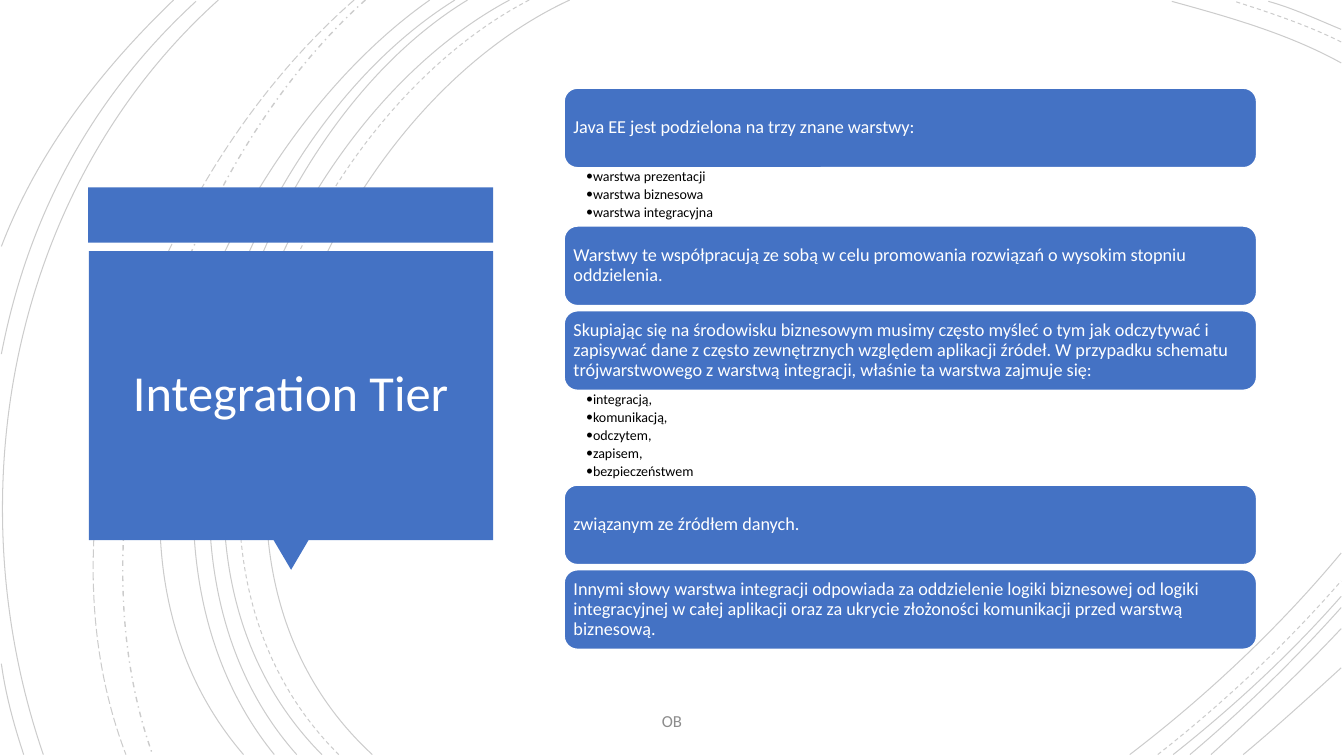
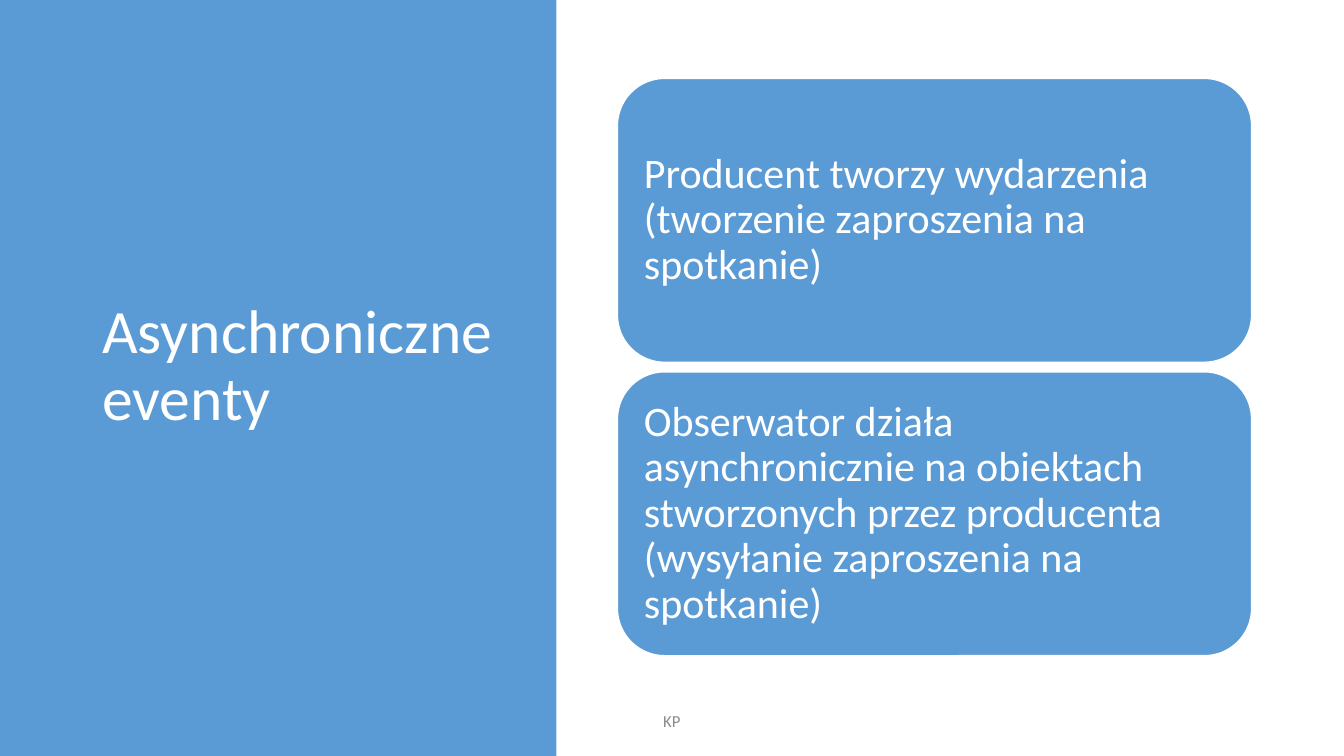
from lxml.etree import SubElement
from pptx import Presentation
from pptx.dml.color import RGBColor
from pptx.enum.dml import MSO_LINE_DASH_STYLE as Dash
from pptx.enum.shapes import MSO_SHAPE as Shape
from pptx.enum.text import MSO_ANCHOR as Anchor, PP_ALIGN as Align
from pptx.oxml.ns import qn
from pptx.util import Pt

FONT = "Calibri"
WHITE = RGBColor(0xFF, 0xFF, 0xFF)
BLACK = RGBColor(0x00, 0x00, 0x00)
GREY = RGBColor(0x8C, 0x8C, 0x8C)
BLUE = RGBColor(0x44, 0x72, 0xC4)
SKY = RGBColor(0x5B, 0x9B, 0xD5)

# Cubic curves (start, two controls, end) grouped by dash style and line width
ARCS = {
    (Dash.SOLID, 0.75): [
        ((407, 0), (227, 83), (103, 389), (266, 539)),
        ((364, 0), (194, 91), (79, 387), (230, 539)),
        ((334, 0), (176, 96), (79, 390), (212, 539)),
        ((325, 0), (166, 99), (70, 384), (196, 539)),
        ((307, 0), (156, 106), (38, 381), (174, 539)),
        ((156, 0), (8, 133), (-33, 353), (31, 539)),
        ((140, 1), (66, 69), (20, 154), (1, 253)),
        ((124, 0), (72, 50), (27, 108), (1, 176)),
        ((1, 474), (4, 496), (10, 518), (17, 539)),
        ((958, 45), (920, 24), (877, 12), (837, 1)),
        ((958, 21), (941, 14), (924, 6), (906, 1)),
        ((807, 539), (862, 497), (914, 448), (958, 395)),
        ((838, 539), (881, 505), (922, 467), (958, 426)),
        ((850, 539), (888, 507), (924, 472), (958, 434)),
        ((865, 539), (897, 510), (929, 480), (958, 449)),
        ((888, 539), (912, 519), (935, 498), (958, 477)),
    ],
    (Dash.DASH, 0.75): [
        ((378, 0), (205, 90), (89, 387), (242, 539)),
        ((958, 30), (934, 18), (907, 9), (882, 1)),
        ((827, 539), (873, 503), (918, 461), (958, 415)),
    ],
    (Dash.DASH_DOT, 1): [((261, 0), (127, 120), (47, 366), (109, 539))],
    (Dash.LONG_DASH, 0.75): [((253, 0), (113, 122), (21, 359), (90, 539))],
}

# Each card: its text and the bullets below it
TIER_CARDS = [
    ("Java EE jest podzielona na trzy znane warstwy:",
     ["warstwa prezentacji", "warstwa biznesowa", "warstwa integracyjna"]),
    ("Warstwy te współpracują ze sobą w celu promowania rozwiązań o wysokim "
     "stopniu oddzielenia.", []),
    ("Skupiając się na środowisku biznesowym musimy często myśleć o tym jak "
     "odczytywać i zapisywać dane z często zewnętrznych względem aplikacji "
     "źródeł. W przypadku schematu trójwarstwowego z warstwą integracji, "
     "właśnie ta warstwa zajmuje się:",
     ["integracją,", "komunikacją,", "odczytem,", "zapisem,", "bezpieczeństwem"]),
    ("związanym ze źródłem danych.", []),
    ("Innymi słowy warstwa integracji odpowiada za oddzielenie logiki "
     "biznesowej od logiki integracyjnej w całej aplikacji oraz za ukrycie "
     "złożoności komunikacji przed warstwą biznesową.", []),
]
EVENT_CARDS = [
    ("Producent tworzy wydarzenia (tworzenie zaproszenia na spotkanie)", []),
    ("Obserwator działa asynchronicznie na obiektach stworzonych przez "
     "producenta (wysyłanie zaproszenia na spotkanie)", []),
]


def set_all(target, values):
    for name, value in values.items():
        setattr(target, name, value)


def write(frame, lines, size, color, align=Align.LEFT, spacing=0.9,
          anchor=Anchor.MIDDLE, margins=(7.2, 3.6, 7.2, 3.6)):
    """Fill a text frame; margins are left, top, right, bottom."""
    left, top, right, bottom = map(Pt, margins)
    set_all(frame, {"word_wrap": True, "vertical_anchor": anchor,
                    "margin_left": left, "margin_top": top,
                    "margin_right": right, "margin_bottom": bottom})
    for index, line in enumerate(lines):
        paragraph = frame.add_paragraph() if index else frame.paragraphs[0]
        set_all(paragraph, {"alignment": align, "line_spacing": spacing})
        run = paragraph.add_run()
        run.text = line
        set_all(run.font, {"name": FONT, "size": Pt(size)})
        run.font.color.rgb = color


def add_text(slide, box, lines, size, color, **options):
    frame = slide.shapes.add_textbox(*map(Pt, box)).text_frame
    write(frame, lines, size, color, **options)
    return frame


def add_block(slide, preset, box, fill, outline=None):
    block = slide.shapes.add_shape(preset, *map(Pt, box))
    block.shadow.inherit = False
    block.fill.solid()
    block.fill.fore_color.rgb = fill
    if outline is None:
        block.line.fill.background()
    else:
        block.line.color.rgb = outline
        block.line.width = Pt(1)
    return block


def add_bullets(slide, box, lines):
    frame = add_text(slide, box, lines, 10, BLACK, anchor=Anchor.TOP,
                     margins=(15.7, 1.3, 7.2, 1.3))
    for paragraph in frame.paragraphs:
        paragraph.space_after = Pt(2)
        properties = paragraph._p.get_or_add_pPr()
        properties.set("marL", str(Pt(4.5)))
        properties.set("indent", str(-Pt(4.5)))
        SubElement(properties, qn("a:buFont")).set("typeface", FONT)
        SubElement(properties, qn("a:buChar")).set("char", "•")


def add_cards(slide, cards, left, top, width, height, gap, size, fill):
    """Stack cards downwards, each followed by its bullets or by a gap."""
    for text, bullets in cards:
        card = add_block(slide, Shape.ROUNDED_RECTANGLE,
                         (left, top, width, height), fill, WHITE)
        write(card.text_frame, [text], size, WHITE, margins=[0.3 * size] * 4)
        top += height
        if bullets:
            list_height = 13 * len(bullets) + 2.7
            add_bullets(slide, (left, top, width, list_height), bullets)
            top += list_height
        else:
            top += gap


def add_arc(slide, curve, dash, width):
    """Draw one cubic curve as a freeform whose three segments become a Bézier."""
    start, *others = [(Pt(x), Pt(y)) for x, y in curve]
    builder = slide.shapes.build_freeform(*start)
    builder.add_line_segments(others, close=False)
    arc = builder.convert_to_shape()
    outline = arc._element.spPr.find(".//" + qn("a:path"))
    bezier = SubElement(outline, qn("a:cubicBezTo"))
    for segment in outline.findall(qn("a:lnTo")):
        bezier.append(segment[0])
        outline.remove(segment)
    arc.shadow.inherit = False
    arc.fill.background()
    arc.line.color.rgb = BLACK
    set_all(arc.line, {"width": Pt(width), "dash_style": dash})
    color = arc._element.spPr.find(".//" + qn("a:srgbClr"))
    SubElement(color, qn("a:alpha")).set("val", "20000")


def add_footer(slide, initials):
    add_text(slide, (318, 500.5, 324, 28.75), [initials], 12, GREY,
             align=Align.CENTER, spacing=1.0)


def build_tier_slide(slide):
    for (dash, width), curves in ARCS.items():
        for curve in curves:
            add_arc(slide, curve, dash, width)
    add_block(slide, Shape.RECTANGLE, (63, 133.8, 289.2, 39.5), BLUE)
    pointer = add_block(slide, Shape.ISOSCELES_TRIANGLE,
                        (195.3, 385.6, 25.2, 21.4), BLUE)
    pointer.rotation = 180
    add_block(slide, Shape.RECTANGLE, (63.5, 179.3, 288.7, 206.5), BLUE)
    add_text(slide, (69.8, 186, 275.7, 193), ["Integration Tier"], 36, WHITE,
             align=Align.CENTER)
    add_cards(slide, TIER_CARDS, left=403, top=63, width=494.6,
              height=56.8, gap=3.7, size=13, fill=BLUE)
    add_footer(slide, "OB")


def build_events_slide(slide):
    add_block(slide, Shape.RECTANGLE, (0, 0, 397.5, 540), SKY)
    add_text(slide, (66, 49, 296.6, 426.2), ["Asynchroniczne eventy"], 44, WHITE)
    add_cards(slide, EVENT_CARDS, left=441, top=56, width=453,
              height=202.8, gap=6.8, size=30, fill=SKY)
    add_footer(slide, "KP")


def main():
    deck = Presentation()
    set_all(deck, {"slide_width": Pt(960), "slide_height": Pt(540)})
    for build in (build_tier_slide, build_events_slide):
        build(deck.slides.add_slide(deck.slide_layouts[6]))
    deck.save("out.pptx")


if __name__ == "__main__":
    main()
